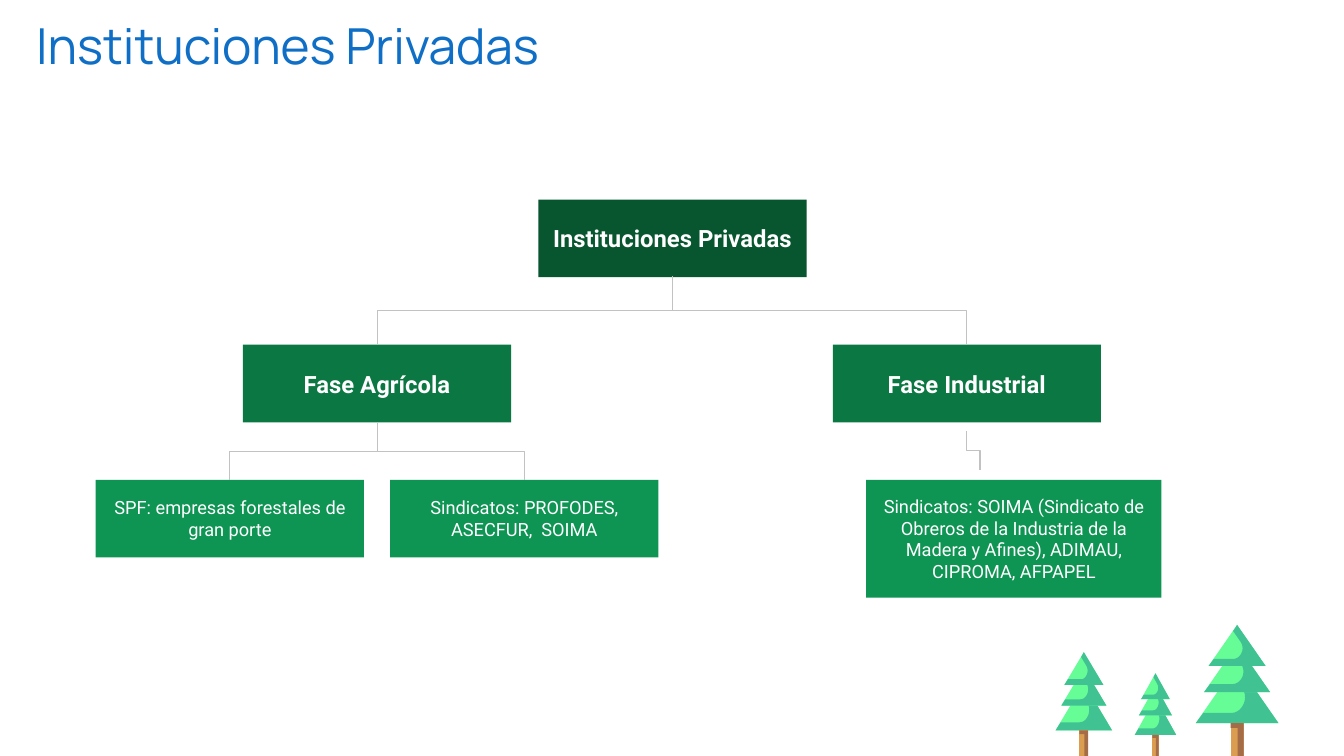
from pptx import Presentation
from pptx.dml.color import RGBColor
from pptx.enum.shapes import MSO_CONNECTOR, MSO_SHAPE
from pptx.enum.text import MSO_ANCHOR, MSO_AUTO_SIZE, PP_ALIGN
from pptx.oxml.ns import qn
from pptx.oxml.xmlchemy import OxmlElement
from pptx.util import Inches, Pt

ELBOW = MSO_CONNECTOR.ELBOW
RECTANGLE = MSO_SHAPE.RECTANGLE
MIDDLE = MSO_ANCHOR.MIDDLE
CENTER = PP_ALIGN.CENTER
GROW = MSO_AUTO_SIZE.SHAPE_TO_FIT_TEXT

COLORS = {
    "title": "0F6FC6", "text": "FFFFFF", "line": "C2C2C2",
    "root": "085630", "phase": "0B7743", "member": "0E9453",
    "leaf": "66FD97", "leaf shade": "40C293",
    "trunk": "DB9E51", "trunk shade": "A56C48",
}


def write(shape, text, font, size, color, bold, inset):
    frame = shape.text_frame
    frame.word_wrap = True
    frame.margin_left = frame.margin_right = Inches(inset)
    frame.margin_top = frame.margin_bottom = Inches(inset)
    para = frame.paragraphs[0]
    span = para.add_run()
    span.text = text
    span.font.name = font
    span.font.size = Pt(size)
    span.font.bold = bold
    span.font.color.rgb = RGBColor.from_string(COLORS[color])
    return frame, para


def draw_outline(group, left, top, width, height, points, color):
    corners = [(Inches(left + x * width), Inches(top + y * height)) for x, y in points]
    builder = group.shapes.build_freeform(*corners[0])
    builder.add_line_segments(corners[1:], close=True)
    shape = builder.convert_to_shape()
    shape.shadow.inherit = False
    shape.fill.solid()
    shape.fill.fore_color.rgb = RGBColor.from_string(COLORS[color])
    shape.line.fill.background()


deck = Presentation()
deck.slide_width = Inches(13.33)
deck.slide_height = Inches(7.5)
page = deck.slides.add_slide(deck.slide_layouts[6])

CURVE = [(0.56, 0.41), (0.65, 0.58), (0.56, 0.83), (0.43, 0.83)]
CURVE_STEPS = 10
bulge = []
for step in range(CURVE_STEPS + 1):
    t = step / CURVE_STEPS
    weights = [(1 - t) ** 3, 3 * t * (1 - t) ** 2, 3 * t ** 2 * (1 - t), t ** 3]
    bulge.append(tuple(sum(w * point[axis] for w, point in zip(weights, CURVE)) for axis in (0, 1)))

TRIANGLE = [(0.5, 0), (0, 1), (1, 1)]
TRIANGLE_SHADE = [(0.5, 0), (0.43, 0.15), *bulge, (0.09, 0.83), (0, 1), (1, 1)]
SQUARE = [(0, 0), (0, 1), (1, 1), (1, 0)]
TIERS = [(0.65, 1), (0.33, 0.8), (0, 0.69)]

trees = [(12.27, 6.2, 0.82, 0.59), (11.46, 6.68, 0.41, 0.37), (10.75, 6.47, 0.56, 0.47)]
for center, top, width, height in trees:
    tree = page.shapes.add_group_shape()
    for drop, scale in TIERS:
        tier = (center - width * scale / 2, top + drop * height, width * scale, height * scale)
        draw_outline(tree, *tier, TRIANGLE, "leaf")
        draw_outline(tree, *tier, TRIANGLE_SHADE, "leaf shade")
    trunk_top = top + 1.65 * height
    trunk_height = 7.5 - trunk_top
    trunk_width = 0.155 * width
    cap = 0.08 * height / trunk_height
    trunk = (center - trunk_width / 2, trunk_top, trunk_width, trunk_height)
    trunk_shade = [(0, 0), (0, cap), (0.55, cap), (0.55, 1), (1, 1), (1, 0)]
    draw_outline(tree, *trunk, SQUARE, "trunk")
    draw_outline(tree, *trunk, trunk_shade, "trunk shade")

title = page.shapes.add_textbox(Inches(0.26), Inches(0.12), Inches(6.85), Inches(0.74))
frame, para = write(title, "Instituciones Privadas", "Manrope", 35.4, "title", False, 0.1)
frame.auto_size = GROW
para.line_spacing = 0.9

boxes = [
    ("Instituciones Privadas", "root", 5.34, 1.98, 2.66, 0.77),
    ("Fase Agrícola", "phase", 2.41, 3.42, 2.66, 0.77),
    ("Fase Industrial", "phase", 8.26, 3.42, 2.66, 0.77),
    ("Sindicatos: SOIMA (Sindicato de Obreros de la Industria de la Madera y Afines), "
     "ADIMAU, CIPROMA, AFPAPEL", "member", 8.59, 4.76, 2.93, 1.17),
    ("Sindicatos: PROFODES, ASECFUR,  SOIMA", "member", 3.87, 4.76, 2.66, 0.77),
    ("SPF: empresas forestales de gran porte", "member", 0.95, 4.76, 2.66, 0.77),
]
for text, level, left, top, width, height in boxes:
    box = page.shapes.add_shape(RECTANGLE, Inches(left), Inches(top), Inches(width), Inches(height))
    box.shadow.inherit = False
    box.fill.solid()
    box.fill.fore_color.rgb = RGBColor.from_string(COLORS[level])
    box.line.fill.background()
    size = 13 if level == "member" else 17
    frame, para = write(box, text, "Roboto", size, "text", level != "member", 0.13)
    frame.vertical_anchor = MIDDLE
    para.alignment = CENTER

branches = [
    (6.67, 2.74, 9.59, 3.42), (6.67, 2.74, 3.74, 3.42),
    (3.74, 4.19, 5.2, 4.76), (3.74, 4.19, 2.28, 4.76),
    (9.59, 4.28, 9.72, 4.66),
]
for x1, y1, x2, y2 in branches:
    middle_x, middle_y = (x1 + x2) / 2, (y1 + y2) / 2
    half_run, half_drop = (x2 - x1) / 2, (y2 - y1) / 2
    branch = page.shapes.add_connector(
        ELBOW,
        Inches(middle_x - half_drop), Inches(middle_y + half_run),
        Inches(middle_x + half_drop), Inches(middle_y - half_run),
    )
    branch.line.color.rgb = RGBColor.from_string(COLORS["line"])
    branch.line.width = Pt(0.75)
    properties = branch._element.spPr
    properties.find(qn("a:xfrm")).set("rot", "5400000")
    properties.append(OxmlElement("a:effectLst"))

deck.save("out.pptx")
